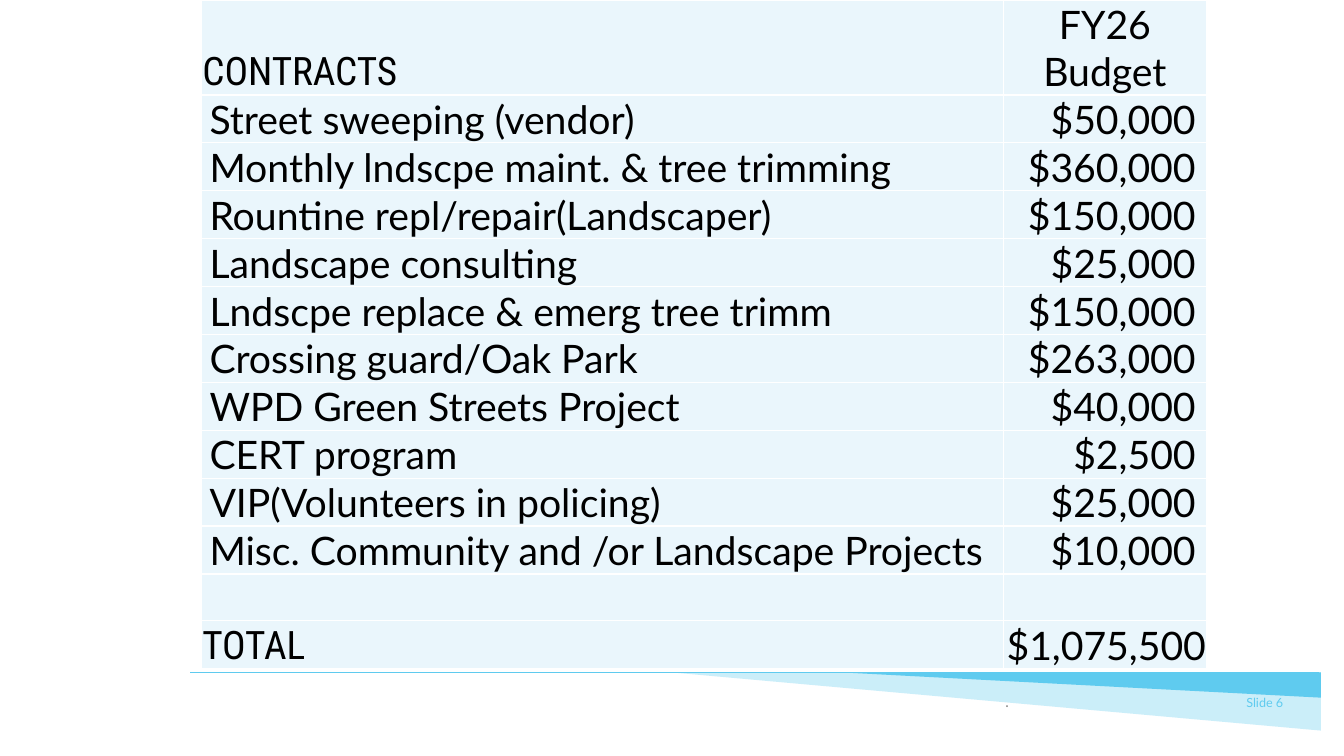
from lxml.etree import SubElement
from pptx import Presentation
from pptx.dml.color import RGBColor
from pptx.enum.shapes import MSO_CONNECTOR, MSO_SHAPE
from pptx.enum.text import MSO_ANCHOR, PP_ALIGN
from pptx.oxml import parse_xml
from pptx.oxml.ns import nsdecls, qn
from pptx.util import Cm, Pt

COLORS = {"accent": "5FCBEF", "cell": "EAF6FC", "border": "FFFFFF",
          "text": "000000", "muted": "8C8C8C"}
BODY_FONT, LABEL_FONT = "Lato", "Roboto Condensed"

CONTRACTS = [
    ("Street sweeping (vendor)", "$50,000"),
    ("Monthly lndscpe maint. & tree trimming", "$360,000"),
    ("Rountine repl/repair(Landscaper)", "$150,000"),
    ("Landscape consulting", "$25,000"),
    ("Lndscpe replace & emerg tree trimm", "$150,000"),
    ("Crossing guard/Oak Park", "$263,000"),
    ("WPD Green Streets Project", "$40,000"),
    ("CERT program", "$2,500"),
    ("VIP(Volunteers in policing)", "$25,000"),
    ("Misc. Community and /or Landscape Projects", "$10,000"),
]


def color(name):
    return RGBColor.from_string(COLORS[name])


class BudgetSlide:
    def __init__(self, presentation):
        self.slide = presentation.slides.add_slide(presentation.slide_layouts[6])

    def style(self, paragraph, size, font=BODY_FONT, ink="text",
              align=PP_ALIGN.LEFT, bold=False):
        paragraph.alignment = align
        paragraph.font.size = Pt(size)
        paragraph.font.name = font
        paragraph.font.bold = bold
        paragraph.font.color.rgb = color(ink)

    def rule(self, left, right, top):
        line = self.slide.shapes.add_connector(
            MSO_CONNECTOR.STRAIGHT, Cm(left), Cm(top), Cm(right), Cm(top))
        line.line.color.rgb = color("accent")
        line.line.width = Pt(1)
        SubElement(line._element.spPr, qn("a:effectLst"))

    def wedge(self, left, top, width, height, opacity=100):
        shape = self.slide.shapes.add_shape(
            MSO_SHAPE.RIGHT_TRIANGLE, Cm(left), Cm(top), Cm(width), Cm(height))
        shape.rotation = 180
        shape.shadow.inherit = False
        shape.fill.solid()
        shape.fill.fore_color.rgb = color("accent")
        shape.line.fill.background()
        if opacity < 100:
            fill_color = shape._element.spPr.find(qn("a:solidFill"))[0]
            SubElement(fill_color, qn("a:alpha"), val=str(opacity * 1000))

    def footer(self, text, left, width, ink, bold=False):
        box = self.slide.shapes.add_textbox(Cm(left), Cm(17.2), Cm(width), Cm(1.02))
        frame = box.text_frame
        frame.word_wrap = True
        frame.vertical_anchor = MSO_ANCHOR.MIDDLE
        frame.text = text
        self.style(frame.paragraphs[0], 9, ink=ink, align=PP_ALIGN.RIGHT, bold=bold)

    def table(self, left, top, widths, heights):
        frame = self.slide.shapes.add_table(
            len(heights), len(widths), Cm(left), Cm(top),
            Cm(sum(widths)), Cm(sum(heights)))
        table = frame.table
        table.first_row = table.horz_banding = False
        for column, width in zip(table.columns, widths):
            column.width = Cm(width)
        for row, height in zip(table.rows, heights):
            row.height = Cm(height)
        for cell in table.iter_cells():
            cell.fill.solid()
            cell.fill.fore_color.rgb = color("cell")
            self.borders(cell)
        return table

    def borders(self, cell):
        properties = cell._tc.get_or_add_tcPr()
        for index, side in enumerate("LRTB"):
            properties.insert(index, parse_xml(
                f'<a:ln{side} {nsdecls("a")} w="12700"><a:solidFill>'
                f'<a:srgbClr val="{COLORS["border"]}"/></a:solidFill></a:ln{side}>'))

    def cell(self, cell, text, font=BODY_FONT, align=PP_ALIGN.LEFT,
             left=0.02, right=0.02):
        cell.margin_left, cell.margin_right = Cm(left), Cm(right)
        cell.margin_top, cell.margin_bottom = Cm(0.02), 0
        cell.vertical_anchor = MSO_ANCHOR.BOTTOM
        cell.text = text
        self.style(cell.text_frame.paragraphs[0], 28, font, align=align)


def main():
    presentation = Presentation()
    presentation.slide_width, presentation.slide_height = Cm(33.87), Cm(19.05)
    page = BudgetSlide(presentation)

    # Footer band
    page.rule(4.8, 33.25, 16.94)
    page.wedge(16.89, 16.94, 16.4, 1.47, opacity=32)
    page.wedge(21.15, 16.94, 12.14, 0.64)
    page.footer(".", 17.75, 7.92, "muted", bold=True)
    page.footer("Slide 6", 29.92, 2.67, "accent")

    # Budget table: header, contracts, spacer, total
    heights = [2.38] + [1.2] * len(CONTRACTS) + [1.18, 1.18]
    table = page.table(5.08, 0, [20.2, 5.13], heights)
    page.cell(table.cell(0, 0), "CONTRACTS", LABEL_FONT)
    page.cell(table.cell(0, 1), "FY26 Budget", align=PP_ALIGN.CENTER)
    for row, (contract, amount) in enumerate(CONTRACTS, start=1):
        page.cell(table.cell(row, 0), contract, left=0.2)
        page.cell(table.cell(row, 1), amount, align=PP_ALIGN.RIGHT, right=0.28)
    total_row = len(heights) - 1
    page.cell(table.cell(total_row, 0), "TOTAL", LABEL_FONT)
    page.cell(table.cell(total_row, 1), "$1,075,500", align=PP_ALIGN.RIGHT)

    presentation.save("out.pptx")


if __name__ == "__main__":
    main()
